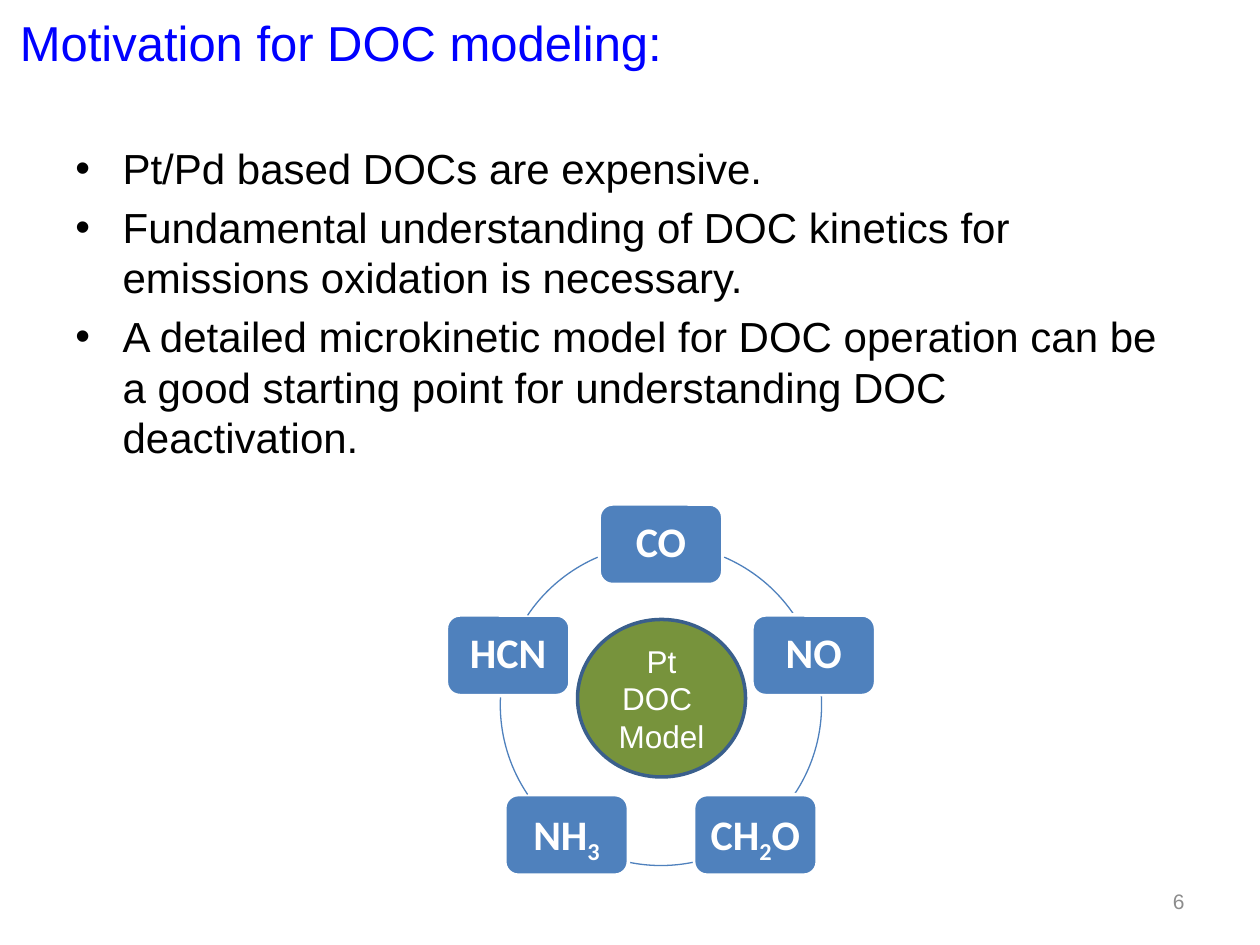
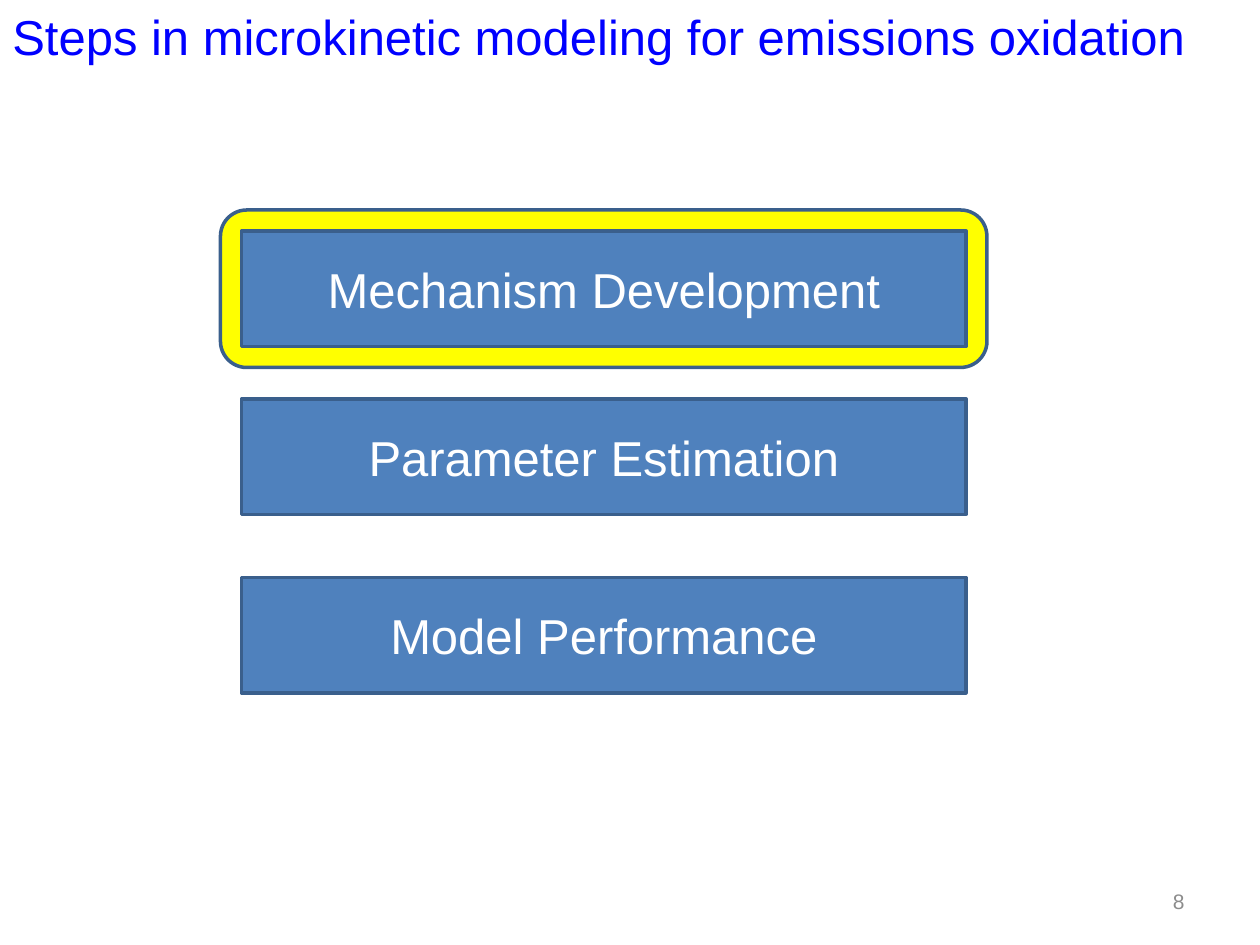
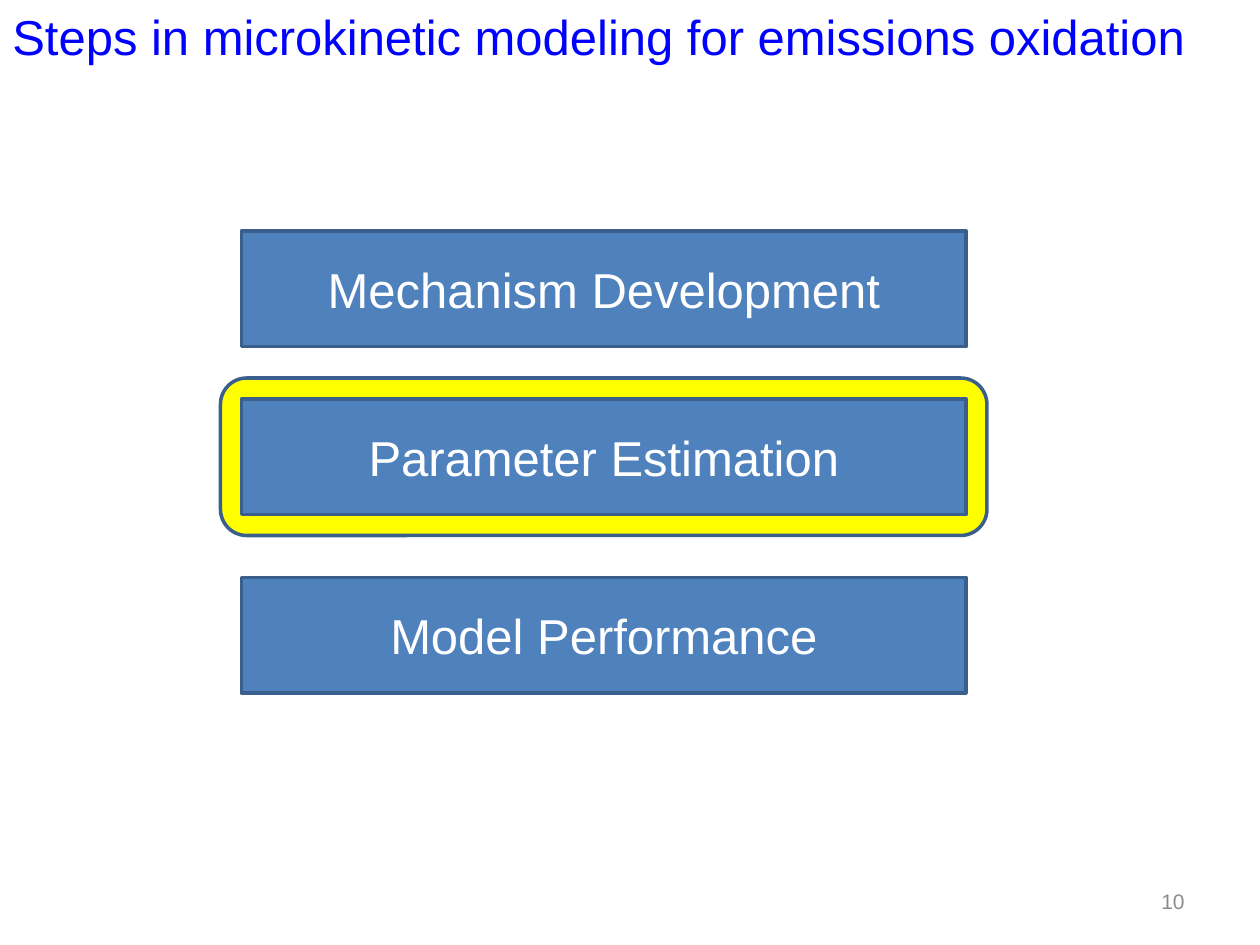
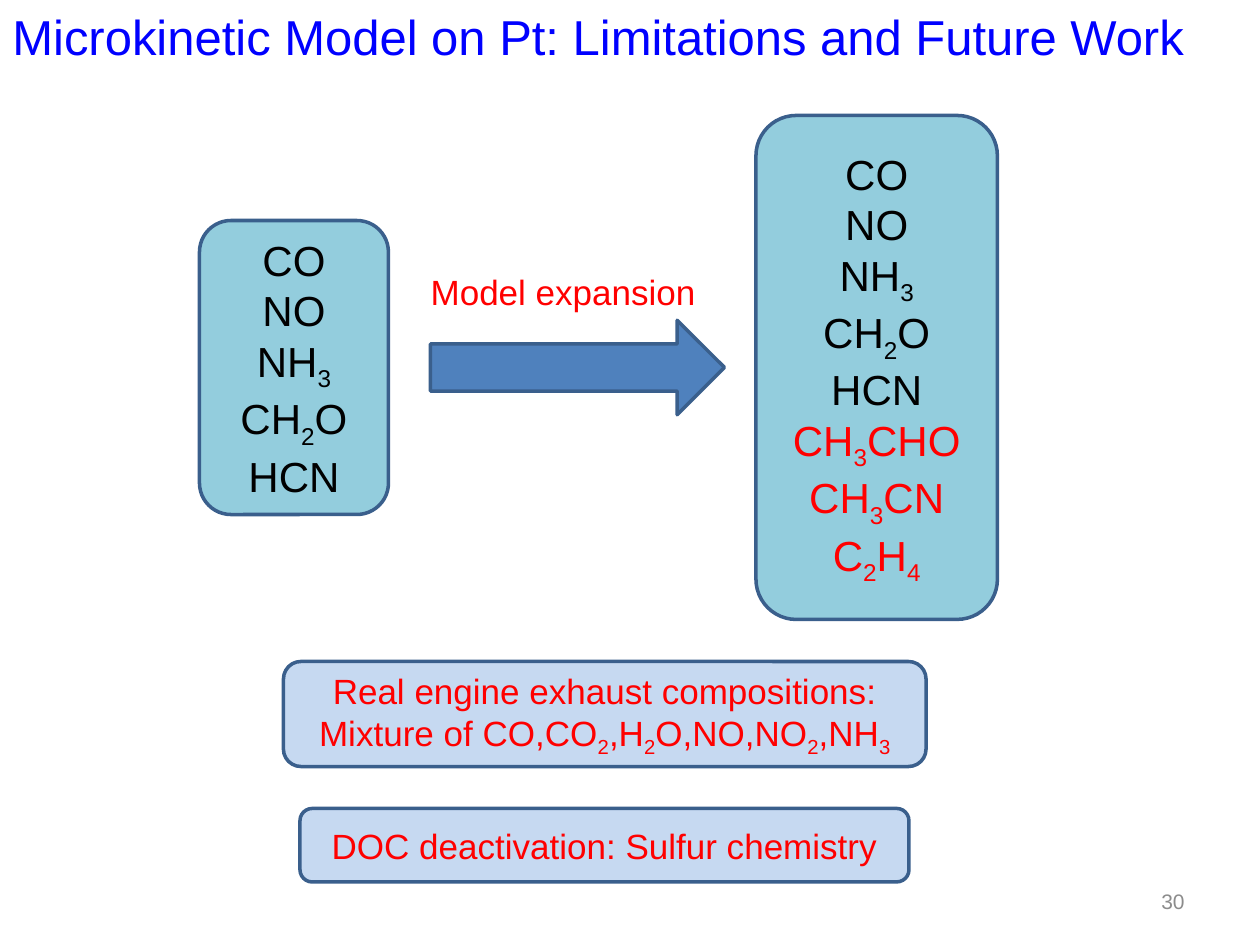
"""Build four slides on microkinetic modeling of diesel oxidation catalysts."""
from dataclasses import dataclass
from itertools import groupby
from math import cos, radians, sin

from lxml.etree import SubElement
from pptx import Presentation
from pptx.dml.color import RGBColor
from pptx.enum.shapes import MSO_SHAPE as Preset
from pptx.enum.text import MSO_ANCHOR as Anchor, MSO_AUTO_SIZE as Fit, PP_ALIGN as Align
from pptx.oxml.ns import qn
from pptx.util import Pt

MOTIVATION_TITLE = "Motivation for DOC modeling:"
MOTIVATION = [
    "Pt/Pd based DOCs are expensive.",
    "Fundamental understanding of DOC kinetics for emissions oxidation is necessary.",
    "A detailed microkinetic model for DOC operation can be a good starting point "
    "for understanding DOC deactivation.",
]
CYCLE = ["CO", "NO", "CH2O", "NH3", "HCN"]
CYCLE_ARCS = [(23.2, 56.1), (87, 123.9), (168.6, 191.4), (236.1, 273), (303.9, 336.8)]
CYCLE_CORE = ["Pt", "DOC ", "Model"]

STEPS_TITLE = "Steps in microkinetic modeling for emissions oxidation"
STEPS = [("Mechanism Development", 132), ("Parameter Estimation", 228), ("Model Performance", 330)]

FUTURE_TITLE = "Microkinetic Model on Pt: Limitations and Future Work"
CURRENT_SPECIES = ["CO", "NO", "NH3", "CH2O", "HCN"]
ADDED_SPECIES = ["CH3CHO", "CH3CN", "C2H4"]
EXPANSION = "Model expansion"
EXHAUST = ["Real engine exhaust compositions:", "Mixture of CO,CO2,H2O,NO,NO2,NH3"]
DEACTIVATION = ["DOC deactivation: Sulfur chemistry"]


@dataclass(frozen=True)
class Theme:
    """Colours, fonts and type sizes in one place."""
    title: str = "0000FF"
    text: str = "000000"
    light: str = "FFFFFF"
    accent: str = "FF0000"
    number: str = "8C8C8C"
    blue: str = "4F81BD"
    edge: str = "3A5F8C"
    green: str = "77933C"
    yellow: str = "FFFF00"
    aqua: str = "93CDDD"
    pale: str = "C6D9F1"
    font: str = "Arial"
    node_font: str = "Calibri"
    large: int = 28
    body: int = 24
    note: int = 20
    core: int = 18
    small: int = 12


THEME = Theme()


def write(para, text, size, color, font=THEME.font, bold=False, formula=False):
    """Add text run by run, lowering the digits of a chemical formula."""
    pieces = groupby(text, str.isdigit) if formula else [(False, text)]
    for is_digit, letters in pieces:
        span = para.add_run()
        span.text = "".join(letters)
        span.font.size, span.font.name, span.font.bold = Pt(size), font, bold
        span.font.color.rgb = RGBColor.from_string(color)
        if is_digit:
            span.font.bold = bold
            span._r.get_or_add_rPr().set("baseline", "-25000")


def add_lines(box, lines, size, color, align=Align.CENTER, **style):
    """Write one paragraph per line; a line may be a (text, colour) pair."""
    frame = box.text_frame
    for index, line in enumerate(lines):
        text, shade = line if isinstance(line, tuple) else (line, color)
        para = frame.add_paragraph() if index else frame.paragraphs[0]
        para.alignment = align
        write(para, text, size, shade, **style)
    return frame


def add_box(page, bounds, wrap=True, anchor=Anchor.TOP):
    box = page.shapes.add_textbox(*map(Pt, bounds))
    box.text_frame.word_wrap = wrap
    box.text_frame.vertical_anchor = anchor
    return box


def add_figure(page, preset, bounds, fill, edge=THEME.edge, width=2):
    figure = page.shapes.add_shape(preset, *map(Pt, bounds))
    figure.shadow.inherit = False
    if fill:
        figure.fill.solid()
        figure.fill.fore_color.rgb = RGBColor.from_string(fill)
    else:
        figure.fill.background()
    figure.line.color.rgb = RGBColor.from_string(edge)
    figure.line.width = Pt(width)
    figure.text_frame.vertical_anchor = Anchor.MIDDLE
    return figure


def add_page(deck, title, number, left=0, top=0):
    page = deck.slides.add_slide(deck.slide_layouts[6])
    heading = add_box(page, (left, top, 715.5, 41.2))
    add_lines(heading, [title], THEME.large, THEME.title, Align.LEFT)
    heading.text_frame.auto_size = Fit.SHAPE_TO_FIT_TEXT
    footer = add_box(page, (516, 500.4, 168, 28.8), anchor=Anchor.MIDDLE)
    add_lines(footer, [str(number)], THEME.small, THEME.number, Align.RIGHT)
    return page


def add_bullets(page, lines, bounds):
    frame = add_lines(add_box(page, bounds), lines, THEME.body, THEME.text, Align.LEFT)
    for para in frame.paragraphs:
        para.space_before = Pt(0.2 * THEME.body)
        props = para._p.get_or_add_pPr()
        props.set("marL", str(Pt(27)))
        props.set("indent", str(Pt(-27)))
        SubElement(props, qn("a:buFont")).set("typeface", THEME.font)
        SubElement(props, qn("a:buChar")).set("char", "•")


def add_cycle(page, center_x, center_y, radius, node_width, node_height):
    ring = (center_x - radius, center_y - radius, 2 * radius, 2 * radius)
    for index, (name, arc_angles) in enumerate(zip(CYCLE, CYCLE_ARCS)):
        angle = radians(360 * index / len(CYCLE))
        left = center_x + radius * sin(angle) - node_width / 2
        top = center_y - radius * cos(angle) - node_height / 2
        node = add_figure(page, Preset.ROUNDED_RECTANGLE, (left, top, node_width, node_height),
                          THEME.blue, THEME.light)
        frame = add_lines(node, [name], THEME.body, THEME.light,
                          font=THEME.node_font, bold=True, formula=True)
        frame.word_wrap = False
        frame.paragraphs[0].line_spacing = 0.9
        arc = add_figure(page, Preset.ARC, ring, None, THEME.blue, 0.75)
        for end, degrees in enumerate(arc_angles):
            arc.adjustments[end] = (degrees - 90) % 360 * 0.6
    core = add_figure(page, Preset.OVAL, (330, 354, 96, 90), THEME.green)
    add_lines(core, CYCLE_CORE, THEME.core, THEME.light)


def add_motivation(deck):
    page = add_page(deck, MOTIVATION_TITLE, 6, 4.3, 3.6)
    add_cycle(page, 377.7, 402.8, 91.8, 70.6, 46)
    add_bullets(page, MOTIVATION, (36, 78, 648, 210))


def add_steps(deck, number, current):
    page = add_page(deck, STEPS_TITLE, number)
    left, width, height, margin = 138, 414, 66, 12
    halo = (left - margin, STEPS[current][1] - margin, width + 2 * margin, height + 2 * margin)
    add_figure(page, Preset.FLOWCHART_ALTERNATE_PROCESS, halo, THEME.yellow)
    for name, top in STEPS:
        step = add_figure(page, Preset.RECTANGLE, (left, top, width, height), THEME.blue)
        add_lines(step, [name], THEME.large, THEME.light)


def add_future(deck):
    page = add_page(deck, FUTURE_TITLE, 30)
    expanded = CURRENT_SPECIES + [(name, THEME.accent) for name in ADDED_SPECIES]
    panels = [
        ((114, 126, 108, 168), THEME.aqua, CURRENT_SPECIES, THEME.body, THEME.text),
        ((432, 66, 138, 288), THEME.aqua, expanded, THEME.body, THEME.text),
        ((162, 378, 367.2, 60), THEME.pale, EXHAUST, THEME.note, THEME.accent),
        ((171.4, 462, 348, 42), THEME.pale, DEACTIVATION, THEME.note, THEME.accent),
    ]
    for bounds, fill, lines, size, color in panels:
        panel = add_figure(page, Preset.ROUNDED_RECTANGLE, bounds, fill)
        add_lines(panel, lines, size, color, formula=True)
    add_figure(page, Preset.RIGHT_ARROW, (246, 183, 168, 54), THEME.blue)
    label = add_box(page, (238.3, 151.2, 167, 31.7), wrap=False)
    add_lines(label, [EXPANSION], THEME.note, THEME.accent)
    label.text_frame.auto_size = Fit.SHAPE_TO_FIT_TEXT


def main():
    deck = Presentation()
    deck.slide_width, deck.slide_height = Pt(720), Pt(540)
    add_motivation(deck)
    add_steps(deck, 8, 0)
    add_steps(deck, 10, 1)
    add_future(deck)
    deck.save("out.pptx")


if __name__ == "__main__":
    main()
